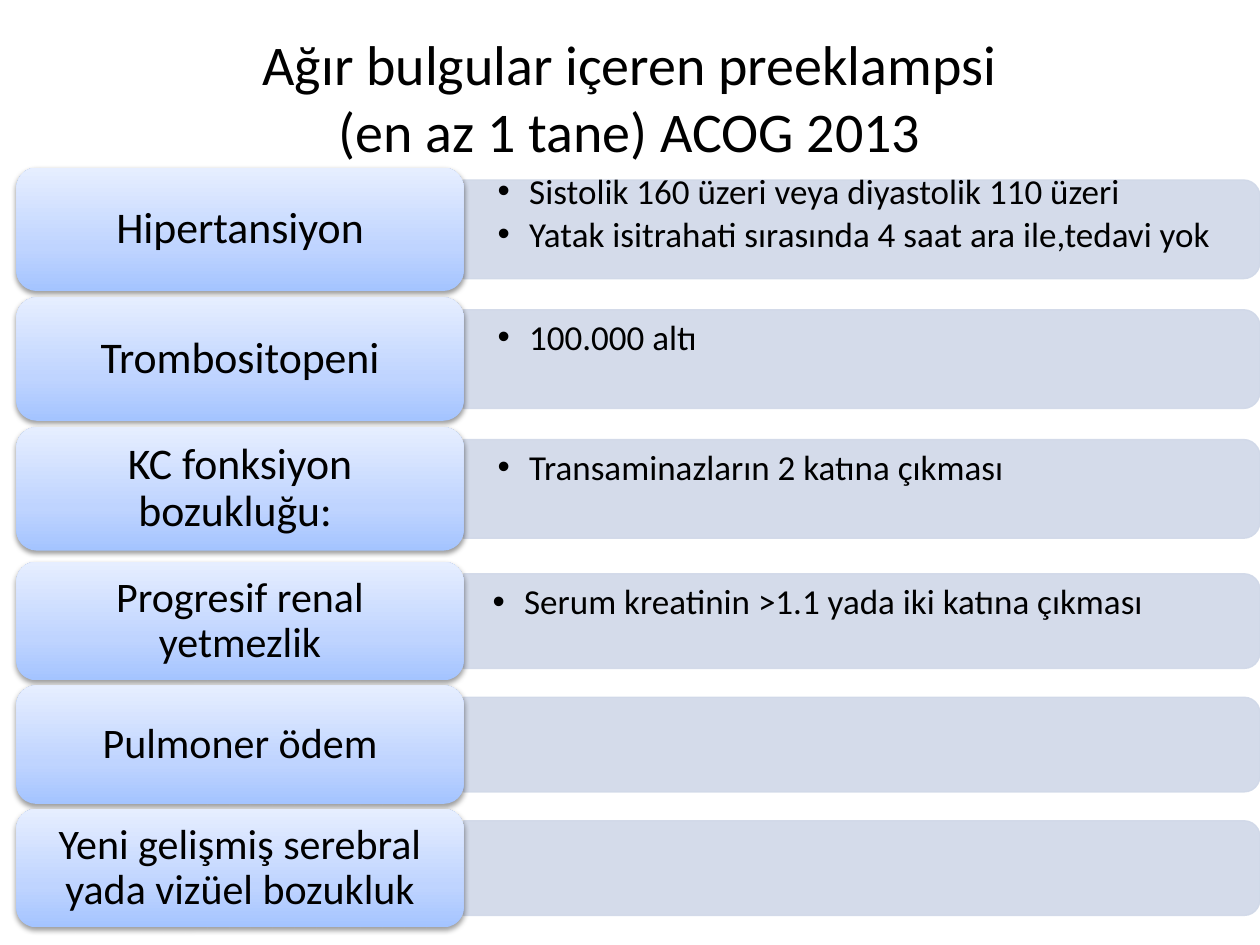
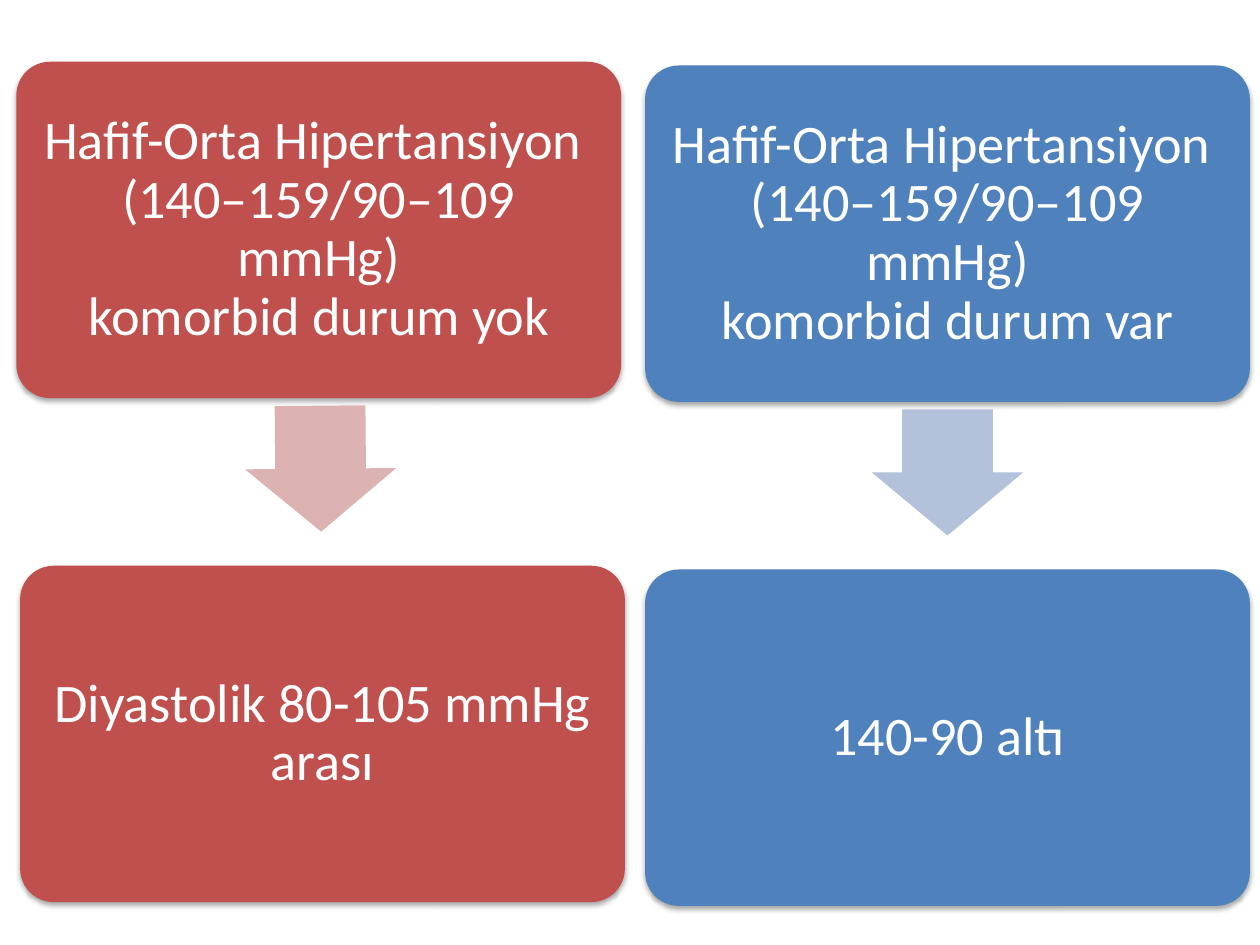
from lxml.etree import SubElement
from pptx import Presentation
from pptx.dml.color import RGBColor
from pptx.enum.shapes import MSO_SHAPE
from pptx.enum.text import MSO_ANCHOR, MSO_AUTO_SIZE, PP_ALIGN
from pptx.oxml.ns import qn
from pptx.util import Inches, Pt

FONT = "Calibri"
BLACK = RGBColor(0x00, 0x00, 0x00)
WHITE = RGBColor(0xFF, 0xFF, 0xFF)
BAR = RGBColor(0xD0, 0xD8, 0xE8)
RED = RGBColor(0xC0, 0x50, 0x4D)
PALE_RED = RGBColor(0xDC, 0xB3, 0xB2)
BLUE = RGBColor(0x4F, 0x81, 0xBD)
PALE_BLUE = RGBColor(0xB3, 0xC1, 0xDB)
LABEL_GRADIENT = [
    (0, RGBColor(0xA4, 0xC4, 0xFF)),
    (35, RGBColor(0xBF, 0xD4, 0xFF)),
    (100, RGBColor(0xE6, 0xEE, 0xFF)),
]

TITLE = "Ağır bulgular içeren preeklampsi\v(en az 1 tane) ACOG 2013"
FINDING_GROUPS = [
    {
        "top": 1.33, "pitch": 1.03, "height": 0.98, "size": 25, "inset": 0.27,
        "findings": [
            ("Hipertansiyon", [
                "Sistolik 160 üzeri veya diyastolik 110 üzeri",
                "Yatak isitrahati sırasında 4 saat ara ile,tedavi yok",
            ]),
            ("Trombositopeni", ["100.000 altı"]),
            ("KC fonksiyon bozukluğu: ", ["Transaminazların 2 katına çıkması"]),
        ],
    },
    {
        "top": 4.46, "pitch": 0.98, "height": 0.94, "size": 24, "inset": 0.23,
        "findings": [
            ("Progresif renal yetmezlik",
             ["Serum kreatinin >1.1 yada iki katına çıkması"]),
            ("Pulmoner ödem", []),
            ("Yeni gelişmiş serebral yada vizüel bozukluk", []),
        ],
    },
]
PRESSURE = "Hafif-Orta Hipertansiyon \v(140–159/90–109 mmHg)\vkomorbid durum "
TARGET_COLUMNS = [
    {
        "lefts": (0.13, 0.16), "top": 0.49, "color": RED,
        "arrow_color": PALE_RED, "arrow_tilt": -0.5,
        "texts": (PRESSURE + "yok", "Diyastolik 80-105 mmHg arası"),
    },
    {
        "lefts": (5.12, 5.12), "top": 0.52, "color": BLUE,
        "arrow_color": PALE_BLUE, "arrow_tilt": 0,
        "texts": (PRESSURE + "var", "140-90 altı"),
    },
]

LABEL_LEFT, LABEL_WIDTH = 0.13, 3.55
BAR_LEFT, BAR_LENGTH = 3.68, 6.32
CARD_WIDTH, CARD_HEIGHT, CARD_PITCH = 4.8, 2.67, 4
ARROW_WIDTH, ARROW_HEIGHT, ARROW_OFFSET = 1.2, 1, 2.73


def add_shape(slide, kind, left, top, width, height):
    shape = slide.shapes.add_shape(
        kind, Inches(left), Inches(top), Inches(width), Inches(height))
    shape.shadow.inherit = False
    shape.line.fill.background()
    return shape


def fill_solid(shape, color):
    shape.fill.solid()
    shape.fill.fore_color.rgb = color


def add_alpha(color_element, percent):
    SubElement(color_element, qn("a:alpha"), val=str(percent * 1000))


def add_shadow(shape, opacity, distance):
    effects = shape._element.spPr.find(qn("a:effectLst"))
    shadow = SubElement(
        effects, qn("a:outerShdw"), blurRad=str(Pt(3.1)),
        dist=str(Pt(distance)), dir="5400000", rotWithShape="0")
    add_alpha(SubElement(shadow, qn("a:srgbClr"), val="000000"), opacity)


def fill_label_gradient(shape):
    shape.fill.gradient()
    shape.fill.gradient_angle = 90
    stops = shape._element.spPr.find(qn("a:gradFill")).find(qn("a:gsLst"))
    for stop in list(stops):
        stops.remove(stop)
    for position, color in LABEL_GRADIENT:
        stop = SubElement(stops, qn("a:gs"), pos=str(position * 1000))
        SubElement(stop, qn("a:srgbClr"), val=str(color))


def format_paragraph(paragraph, size, color, alignment, spacing=0.9):
    paragraph.alignment = alignment
    paragraph.line_spacing = spacing
    for run in paragraph.runs:
        run.font.name = FONT
        run.font.size = Pt(size)
        run.font.color.rgb = color


def set_centred_text(shape, text, size, color, insets):
    frame = shape.text_frame
    frame.text = text
    frame.word_wrap = True
    frame.vertical_anchor = MSO_ANCHOR.MIDDLE
    frame.margin_left = frame.margin_right = Inches(insets[0])
    frame.margin_top = frame.margin_bottom = Inches(insets[1])
    format_paragraph(frame.paragraphs[0], size, color, PP_ALIGN.CENTER)


def add_title(slide, text):
    title = slide.shapes.title
    title.left, title.top = Inches(0.5), Inches(0.14)
    title.width, title.height = Inches(9), Inches(1.25)
    frame = title.text_frame
    frame.text = text
    frame.auto_size = MSO_AUTO_SIZE.NONE
    frame.vertical_anchor = MSO_ANCHOR.MIDDLE
    format_paragraph(frame.paragraphs[0], 32, BLACK, PP_ALIGN.CENTER, 1)


def add_bar(slide, label_top, label_height):
    """Add a bar with rounded right corners: an upright shape turned by 90°."""
    thickness = 0.8 * label_height
    bar = add_shape(
        slide, MSO_SHAPE.ROUND_2_SAME_RECTANGLE,
        BAR_LEFT + (BAR_LENGTH - thickness) / 2,
        label_top + (label_height - BAR_LENGTH) / 2, thickness, BAR_LENGTH)
    bar.rotation = 90
    fill_solid(bar, BAR)
    bar.line.color.rgb = BAR
    bar.line.width = Pt(0.75)
    for color_element in bar._element.spPr.iter(qn("a:srgbClr")):
        add_alpha(color_element, 90)


def add_details(slide, details, label_top, inset):
    top = label_top + (0.05 if len(details) > 1 else 0.18)
    box = slide.shapes.add_textbox(
        Inches(BAR_LEFT), Inches(top), Inches(6.28), Inches(0.71))
    frame = box.text_frame
    frame.text = "\n".join(details)
    frame.word_wrap = True
    frame.margin_left = frame.margin_right = Inches(inset)
    frame.margin_top = frame.margin_bottom = 0
    for paragraph in frame.paragraphs:
        format_paragraph(paragraph, 20, BLACK, PP_ALIGN.LEFT)
        paragraph.space_after = Pt(3)
        properties = paragraph._p.get_or_add_pPr()
        properties.set("marL", str(Inches(0.25)))
        properties.set("indent", str(-Inches(0.25)))
        SubElement(properties, qn("a:buFont"), typeface="Arial")
        SubElement(properties, qn("a:buChar"), char="•")


def add_label(slide, text, top, height, size):
    label = add_shape(slide, MSO_SHAPE.ROUNDED_RECTANGLE,
                      LABEL_LEFT, top, LABEL_WIDTH, height)
    fill_label_gradient(label)
    add_shadow(label, 38, 1.6)
    set_centred_text(label, text, size, BLACK, (0.1, 0.05))


def add_card(slide, text, left, top, color):
    card = add_shape(slide, MSO_SHAPE.ROUNDED_RECTANGLE,
                     left, top, CARD_WIDTH, CARD_HEIGHT)
    card.adjustments[0] = 0.1
    fill_solid(card, color)
    add_shadow(card, 35, 1.8)
    set_centred_text(card, text, 31, WHITE, (0.13, 0.13))


def add_arrow(slide, center, top, color, tilt):
    arrow = add_shape(slide, MSO_SHAPE.DOWN_ARROW, center - ARROW_WIDTH / 2,
                      top, ARROW_WIDTH, ARROW_HEIGHT)
    arrow.adjustments[0] = 0.6
    arrow.adjustments[1] = 0.5
    arrow.rotation = tilt
    fill_solid(arrow, color)


def build_findings_slide(presentation):
    slide = presentation.slides.add_slide(presentation.slide_layouts[5])
    add_title(slide, TITLE)
    for group in FINDING_GROUPS:
        for row, (name, details) in enumerate(group["findings"]):
            top = group["top"] + row * group["pitch"]
            add_bar(slide, top, group["height"])
            if details:
                add_details(slide, details, top, group["inset"])
            add_label(slide, name, top, group["height"], group["size"])


def build_targets_slide(presentation):
    slide = presentation.slides.add_slide(presentation.slide_layouts[6])
    for column in TARGET_COLUMNS:
        lefts, top = column["lefts"], column["top"]
        for row, (text, left) in enumerate(zip(column["texts"], lefts)):
            add_card(slide, text, left, top + row * CARD_PITCH, column["color"])
        center = sum(lefts) / len(lefts) + CARD_WIDTH / 2
        add_arrow(slide, center, top + ARROW_OFFSET,
                  column["arrow_color"], column["arrow_tilt"])


def main():
    presentation = Presentation()
    presentation.slide_width = Inches(10)
    presentation.slide_height = Inches(7.5)
    build_findings_slide(presentation)
    build_targets_slide(presentation)
    presentation.save("out.pptx")


if __name__ == "__main__":
    main()
